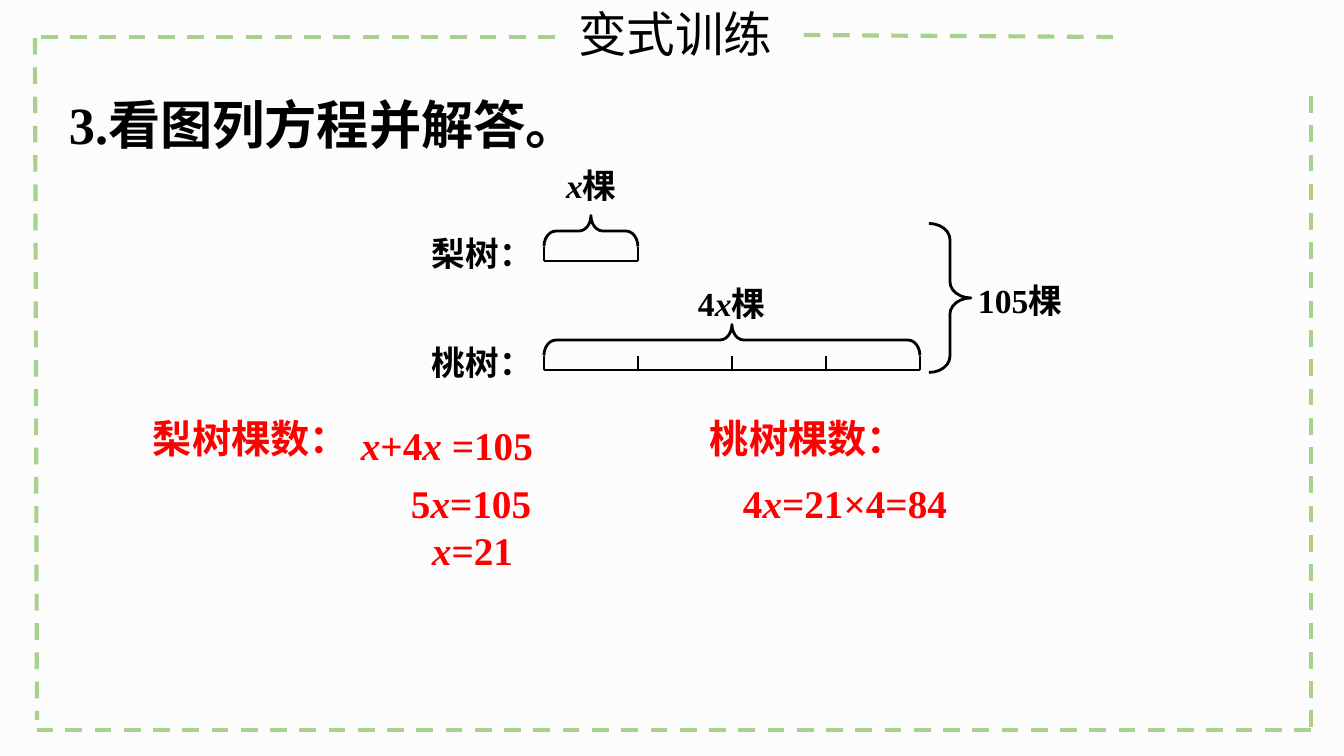
from dataclasses import dataclass
from itertools import groupby

from lxml import etree
from pptx import Presentation
from pptx import util as u
from pptx.dml.color import RGBColor
from pptx.enum import dml, shapes, text
from pptx.oxml.ns import qn


@dataclass(frozen=True)
class Theme:
    paper: RGBColor = RGBColor(0xFC, 0xFC, 0xFC)
    ink: RGBColor = RGBColor(0, 0, 0)
    answer: RGBColor = RGBColor(0xFF, 0, 0)
    frame: RGBColor = RGBColor(0xA9, 0xD1, 0x8E)
    serif: str = "Times New Roman"
    sans: str = "Noto Sans CJK SC"
    title: int = 26
    task: int = 28
    work: int = 21
    label: int = 18
    thin: float = 1.5
    thick: float = 2.25


T = Theme()
LEFT, UNIT, TICK = 544, 94, 14


def px(n):
    return u.Emu(round(n * 914400 / 134.4))


def add_text(slide, words, x, y, w, h, size, color=T.ink, font=T.serif,
             bold=True, inset=(10, 5), lead=1.2):
    """Write one line of text; every x in it is an italic variable."""
    box = slide.shapes.add_textbox(px(x), px(y), px(w), px(h))
    frame = box.text_frame
    frame.word_wrap = True
    frame.auto_size = text.MSO_AUTO_SIZE.NONE
    frame.margin_left = frame.margin_right = px(inset[0])
    frame.margin_top = frame.margin_bottom = px(inset[1])
    para = frame.paragraphs[0]
    para.line_spacing = lead
    for slant, part in groupby(words, lambda c: c == "x"):
        run = para.add_run()
        run.text = "".join(part)
        run.font.size = u.Pt(size)
        run.font.name = font
        run.font.bold = bold
        run.font.italic = slant
        run.font.color.rgb = color
        east = etree.SubElement(run._r.get_or_add_rPr(), qn("a:ea"))
        east.set("typeface", T.sans)


def add_line(slide, x1, y1, x2, y2, color=T.ink, width=T.thin, dash=None):
    line = slide.shapes.add_connector(
        shapes.MSO_CONNECTOR.STRAIGHT, px(x1), px(y1), px(x2), px(y2))
    line.line.color.rgb = color
    line.line.width = u.Pt(width)
    if dash:
        line.line.dash_style = dash
    etree.SubElement(line._element.spPr, qn("a:effectLst"))


def add_brace(slide, x, y, w, h, turn=0):
    """Draw a right brace centred on x, y."""
    brace = slide.shapes.add_shape(
        shapes.MSO_SHAPE.RIGHT_BRACE,
        px(x - w / 2), px(y - h / 2), px(w), px(h))
    brace.adjustments[0] = 0.385
    brace.adjustments[1] = 0.5
    brace.rotation = turn
    brace.shadow.inherit = False
    brace.fill.background()
    brace.line.color.rgb = T.ink
    brace.line.width = u.Pt(T.thin)


def add_bar(slide, name, count, parts, base):
    """Draw a bar of equal parts with its name, brace and count."""
    span = parts * UNIT
    mid = LEFT + span / 2
    add_line(slide, LEFT, base, LEFT + span, base)
    for i in range(parts + 1):
        x = LEFT + i * UNIT
        add_line(slide, x, base - TICK, x, base)
    add_brace(slide, mid, base - 30, 31, span, 270)
    add_text(slide, name, 422, base - 41, 137, 59, T.label)
    # The single-letter count sits a little further above its brace.
    x, y = (556, 152) if parts == 1 else (688, 270)
    add_text(slide, count, x, y, 112, 59, T.label)


def add_frame(slide):
    for ends in ((35, 38, 37, 720), (1311, 96, 1311, 730),
                 (1311, 730, 37, 730), (1113, 37, 796, 35),
                 (555, 37, 36, 37)):
        add_line(slide, *ends, T.frame, T.thick, dml.MSO_LINE.DASH)
    add_text(slide, "变式训练", 565, -3, 233, 73, T.title, font=T.sans,
             bold=False, inset=(13, 7), lead=1)


def add_work(slide):
    for words, x, y, w in (("x+4x =105", 351, 407, 360),
                           ("5x=105", 401, 465, 360),
                           ("4x=21×4=84", 733, 465, 360),
                           ("x=21", 422, 512, 215)):
        add_text(slide, words, x, y, w, 67, T.work, T.answer)
    for words, x in (("梨树棵数：", 143), ("桃树棵数：", 700)):
        add_text(slide, words, x, 400, 202, 67, T.work, T.answer, T.sans)


def main():
    deck = Presentation()
    deck.slide_width, deck.slide_height = px(1344), px(756)
    slide = deck.slides.add_slide(deck.slide_layouts[6])
    fill = slide.background.fill
    fill.solid()
    fill.fore_color.rgb = T.paper
    add_frame(slide)
    add_text(slide, "3.看图列方程并解答。", 59, 75, 590, 86, T.task)
    add_work(slide)
    add_bar(slide, "梨树：", "x棵", 1, 261)
    add_bar(slide, "桃树：", "4x棵", 4, 370)
    add_brace(slide, 950, 298, 42, 149)
    add_text(slide, "105棵", 965, 273, 112, 54, T.label,
             inset=(13, 7), lead=1)
    deck.save("out.pptx")


if __name__ == "__main__":
    main()
